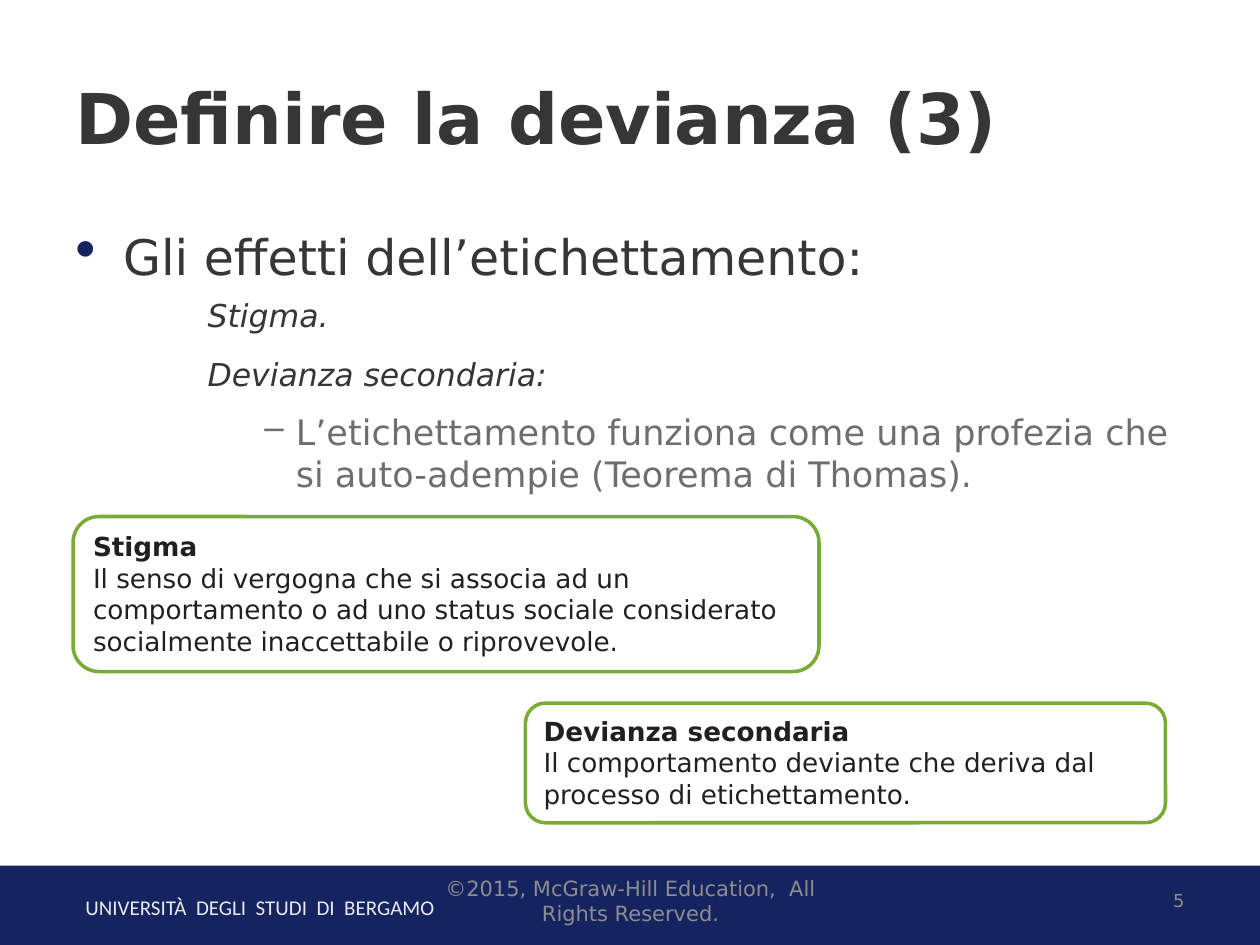
from dataclasses import dataclass

from lxml.etree import SubElement
from pptx import Presentation
from pptx.dml.color import RGBColor
from pptx.enum.shapes import MSO_SHAPE
from pptx.enum.text import MSO_ANCHOR, MSO_AUTO_SIZE, PP_ALIGN
from pptx.oxml.ns import qn
from pptx.util import Inches, Pt


@dataclass(frozen=True)
class Theme:
    font: str = "DejaVu Sans"
    brand: str = "Calibri"
    navy: str = "152460"
    green: str = "78AC35"
    white: str = "FFFFFF"
    dark: str = "363636"
    ink: str = "202020"
    gray: str = "6E6E6E"
    pale: str = "8D8D8D"
    light: str = "E9E9E9"
    title: float = 40
    lead: float = 28
    term: float = 18
    point: float = 20
    card: float = 15
    foot: float = 12
    page: float = 10.2


THEME = Theme()


def assign(target, values):
    for name, value in values.items():
        setattr(target, name, value)


def place(box):
    return [Inches(v) for v in box]


def set_frame(frame, **values):
    assign(frame, {"word_wrap": True, "auto_size": MSO_AUTO_SIZE.NONE,
                   "vertical_anchor": MSO_ANCHOR.TOP, **values})


def set_bullet(para, mark, left, hang, color=None, scale=None):
    """Give a paragraph its indents and, if mark is set, a bullet."""
    props = para._p.get_or_add_pPr()
    props.set("marL", str(Inches(left)))
    props.set("indent", str(Inches(hang)))
    if color:
        SubElement(SubElement(props, qn("a:buClr")), qn("a:srgbClr"), val=color)
    if scale:
        SubElement(props, qn("a:buSzPct"), val=str(scale * 1000))
    if mark:
        SubElement(props, qn("a:buChar"), char=mark)
    else:
        SubElement(props, qn("a:buNone"))


def write(frame, lines):
    """Fill a frame from (text, size, color, font values, paragraph values, bullet)."""
    for i, (text, size, color, font, form, bullet) in enumerate(lines):
        para = frame.paragraphs[0] if i == 0 else frame.add_paragraph()
        if bullet:
            set_bullet(para, *bullet)
        assign(para, {"alignment": PP_ALIGN.LEFT, **form})
        run = para.add_run()
        run.text = text
        assign(run.font, {"name": THEME.font, "size": Pt(size), **font})
        run.font.color.rgb = RGBColor.from_string(color)


def add_text(slide, box, lines, **values):
    frame = slide.shapes.add_textbox(*place(box)).text_frame
    set_frame(frame, **values)
    write(frame, lines)


def add_box(slide, kind, box, fill, line=None):
    shape = slide.shapes.add_shape(kind, *place(box))
    shape.shadow.inherit = False
    shape.fill.solid()
    shape.fill.fore_color.rgb = RGBColor.from_string(fill)
    if line:
        shape.line.color.rgb = RGBColor.from_string(line)
        shape.line.width = Pt(2)
    else:
        shape.line.fill.background()
    return shape


def add_card(slide, box, term, text):
    shape = add_box(slide, MSO_SHAPE.ROUNDED_RECTANGLE, box, THEME.white, THEME.green)
    set_frame(shape.text_frame)
    write(shape.text_frame, [
        (term, THEME.card, THEME.ink, {"bold": True}, {}, None),
        (text, THEME.card, THEME.ink, {"bold": False}, {}, None),
    ])


def add_body(slide):
    term = ({"italic": True},
            {"level": 2, "alignment": PP_ALIGN.JUSTIFY,
             "space_before": Pt(6), "space_after": Pt(6)},
            (None, 1.05, 0))
    add_text(slide, (0.5, 1.75, 9, 4.95), [
        ("Gli effetti dell’etichettamento:", THEME.lead, THEME.dark, {}, {},
         ("•", 0.38, -0.38, THEME.navy, 122)),
        ("Stigma.", THEME.term, THEME.dark, *term),
        ("Devianza secondaria:", THEME.term, THEME.dark, *term),
        ("L’etichettamento funziona come una profezia che si auto-adempie "
         "(Teorema di Thomas).", THEME.point, THEME.gray, {},
         {"level": 3, "space_before": Pt(4)}, ("–", 1.75, -0.25)),
    ])


def add_foot(slide):
    mid = {"vertical_anchor": MSO_ANCHOR.MIDDLE}
    add_text(slide, (7.17, 6.95, 2.33, 0.4), [
        ("5", THEME.page, THEME.pale, {}, {"alignment": PP_ALIGN.RIGHT}, None)], **mid)
    add_text(slide, (3.42, 6.95, 3.17, 0.4), [
        ("©2015, McGraw-Hill Education,  All Rights Reserved.", THEME.foot,
         THEME.pale, {}, {"alignment": PP_ALIGN.CENTER}, None)], **mid)


def main():
    deck = Presentation()
    deck.slide_width, deck.slide_height = Inches(10), Inches(7.5)
    slide = deck.slides.add_slide(deck.slide_layouts[6])
    add_box(slide, MSO_SHAPE.RECTANGLE, (0, 6.87, 10, 0.68), THEME.navy)
    add_text(slide, (0.58, 7.05, 5.82, 0.3), [
        ("UNIVERSITÀ  DEGLI  STUDI  DI  BERGAMO", THEME.foot, THEME.light,
         {"name": THEME.brand}, {}, None)])
    add_text(slide, (0.5, 0.3, 9, 1.25), [
        ("Definire la devianza (3)", THEME.title, THEME.dark, {"bold": True}, {}, None)],
        vertical_anchor=MSO_ANCHOR.MIDDLE)
    add_body(slide)
    add_card(slide, (0.58, 4.1, 5.92, 1.23), "Stigma",
             "Il senso di vergogna che si associa ad un comportamento o ad uno "
             "status sociale considerato socialmente inaccettabile o riprovevole.")
    add_card(slide, (4.17, 5.58, 5.08, 0.95), "Devianza secondaria",
             "Il comportamento deviante che deriva dal processo di etichettamento.")
    add_foot(slide)
    deck.save("out.pptx")


if __name__ == "__main__":
    main()
